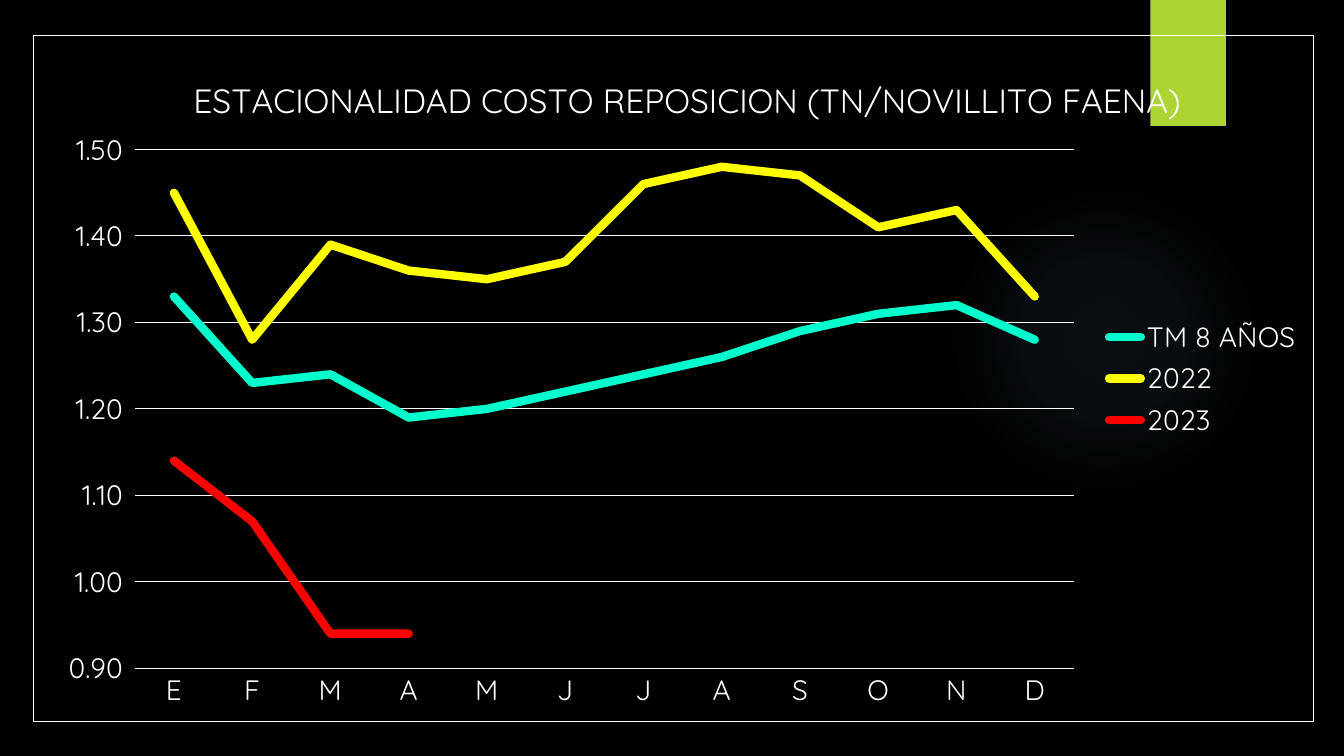
from lxml import etree
from pptx import Presentation
from pptx.chart.data import CategoryChartData
from pptx.dml.color import RGBColor
from pptx.enum.chart import XL_CHART_TYPE as ChartType, XL_LEGEND_POSITION as LegendPosition
from pptx.enum.chart import XL_TICK_MARK as TickMark
from pptx.enum.shapes import MSO_SHAPE as Shape
from pptx.oxml import parse_xml
from pptx.oxml.ns import nsdecls, qn
from pptx.util import Inches, Pt

THEME = {
    "font": "Quicksand",
    "title_size": Pt(24),
    "text_size": Pt(20),
    "grid_width": Pt(0.75),
    "series_width": Pt(6),
    "background": RGBColor.from_string("000000"),
    "text": RGBColor.from_string("FFFFFF"),
    "accent": RGBColor.from_string("ACD433"),
    "glow": RGBColor.from_string("7AC4F0"),
    "average": RGBColor.from_string("00FFCC"),
    "last_year": RGBColor.from_string("FFFF00"),
    "this_year": RGBColor.from_string("FF0000"),
}
MONTHS = "EFMAMJJASOND"
SERIES = [
    ("TM 8 AÑOS", "average",
     [1.33, 1.23, 1.24, 1.19, 1.2, 1.22, 1.24, 1.26, 1.29, 1.31, 1.32, 1.28]),
    ("2022", "last_year",
     [1.45, 1.28, 1.39, 1.36, 1.35, 1.37, 1.46, 1.48, 1.47, 1.41, 1.43, 1.33]),
    ("2023", "this_year", [1.14, 1.07, 0.94, 0.94] + [None] * 8),
]


def style_font(font, size):
    for name, value in {"name": THEME["font"], "size": size, "bold": False}.items():
        setattr(font, name, value)
    font.color.rgb = THEME["text"]


def make_layout(target, **fractions):
    modes = "".join(f'<c:{side}Mode val="edge"/>' for side in "xy")
    values = "".join(f'<c:{side} val="{value}"/>' for side, value in fractions.items())
    return parse_xml(f'<c:layout {nsdecls("c")}><c:manualLayout>{target}{modes}{values}'
                     '</c:manualLayout></c:layout>')


deck = Presentation()
deck.slide_width, deck.slide_height = Inches(13.33), Inches(7.5)
page = deck.slides.add_slide(deck.slide_layouts[6])
page.background.fill.solid()
page.background.fill.fore_color.rgb = THEME["background"]

glow = page.shapes.add_shape(Shape.OVAL, Inches(9.41), Inches(1.83), Inches(3.08), Inches(3.08))
glow.shadow.inherit = False
glow.line.fill.background()
stops = "".join(
    f'<a:gs pos="{position * 1000}"><a:srgbClr val="{THEME["glow"]}">'
    f'<a:alpha val="{alpha * 1000}"/></a:srgbClr></a:gs>'
    for position, alpha in [(0, 7), (36, 6), (69, 0), (100, 0)])
glow.element.spPr.find(qn("a:prstGeom")).addnext(parse_xml(
    f'<a:gradFill {nsdecls("a")}><a:gsLst>{stops}</a:gsLst><a:path path="circle">'
    '<a:fillToRect l="50000" t="50000" r="50000" b="50000"/></a:path></a:gradFill>'))

tab = page.shapes.add_shape(Shape.RECTANGLE, Inches(11.41), 0, Inches(0.75), Inches(1.25))
tab.shadow.inherit = False
tab.fill.solid()
tab.fill.fore_color.rgb = THEME["accent"]
tab.line.fill.background()

data = CategoryChartData()
data.categories = list(MONTHS)
for name, _, values in SERIES:
    data.add_series(name, values)
chart = page.shapes.add_chart(ChartType.LINE, Inches(0.33), Inches(0.35),
                              Inches(12.7), Inches(6.81), data).chart
style_font(chart.font, THEME["text_size"])
chart.element.find(qn("c:chart")).addnext(parse_xml(
    f'<c:spPr {nsdecls("c", "a")}><a:noFill/><a:ln w="{THEME["grid_width"]}"><a:solidFill>'
    f'<a:srgbClr val="{THEME["text"]}"/></a:solidFill></a:ln></c:spPr>'))

chart.has_title = True
title = chart.chart_title
title.include_in_layout = False
title.text_frame.text = "ESTACIONALIDAD COSTO REPOSICION (TN/NOVILLITO FAENA)"
style_font(title.text_frame.paragraphs[0].runs[0].font, THEME["title_size"])
title_element = chart.element.find(".//" + qn("c:title"))
plot_element = chart.element.find(".//" + qn("c:plotArea"))
for parent in (title_element, plot_element):
    for old_layout in parent.findall(qn("c:layout")):
        parent.remove(old_layout)
title_element.find(qn("c:tx")).addnext(make_layout("", x=0.12, y=0.05))
plot_element.insert(0, make_layout('<c:layoutTarget val="inner"/>',
                                   x=0.079, y=0.166, w=0.734, h=0.757))

chart.has_legend = True
chart.legend.position = LegendPosition.RIGHT
chart.legend.include_in_layout = False
style_font(chart.legend.font, THEME["text_size"])

months, costs = chart.category_axis, chart.value_axis
for axis in (months, costs):
    axis.major_tick_mark = axis.minor_tick_mark = TickMark.NONE
    style_font(axis.tick_labels.font, THEME["text_size"])
for name, value in {"minimum_scale": 0.9, "maximum_scale": 1.5, "major_unit": 0.1,
                    "has_major_gridlines": True}.items():
    setattr(costs, name, value)
costs.tick_labels.number_format = '_ * #,##0.00_ ;_ * \\-#,##0.00_ ;_ * "-"?'
costs.tick_labels.number_format_is_linked = False
costs.format.line.fill.background()
for line in (months.format.line, costs.major_gridlines.format.line):
    line.color.rgb = THEME["text"]
    line.width = THEME["grid_width"]

chart.plots[0].vary_by_categories = False
for series, (_, color, _) in zip(chart.plots[0].series, SERIES):
    series.smooth = False
    series.format.line.color.rgb = THEME[color]
    series.format.line.width = THEME["series_width"]
    outline = series.format.line._get_or_add_ln()
    outline.set("cap", "rnd")
    etree.SubElement(outline, qn("a:round"))

deck.save("out.pptx")
